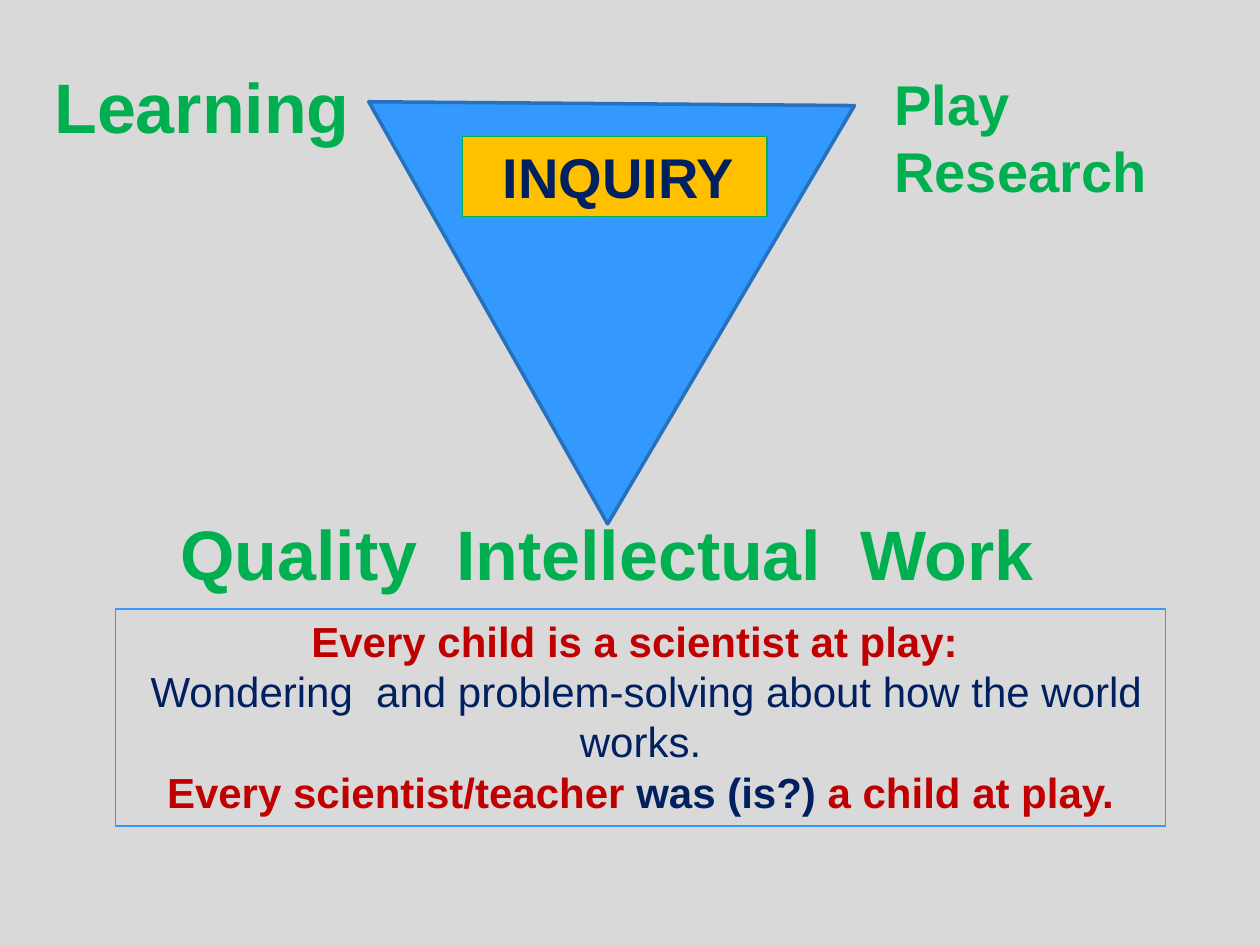
from pptx import Presentation
from pptx.dml.color import RGBColor
from pptx.enum.shapes import MSO_SHAPE as Shape
from pptx.enum.text import MSO_ANCHOR as Anchor, PP_ALIGN as Align
from pptx.util import Pt

GREEN, NAVY, RED = "00B050", "002060", "C00000"
BLUE, EDGE, GOLD, GREY = "3399FF", "2671BD", "FFC000", "D9D9D9"


def rgb(code):
    return RGBColor.from_string(code)


def write(shape, lines, size, align=Align.LEFT, inset=7.2, wrap=True):
    """Fill a shape with lines, each a list of (text, colour, bold) runs."""
    frame = shape.text_frame
    frame.word_wrap = wrap
    frame.vertical_anchor = Anchor.TOP
    frame.margin_left = Pt(inset)
    for i, line in enumerate(lines):
        para = frame.paragraphs[0] if i == 0 else frame.add_paragraph()
        para.alignment = align
        for text, color, bold in line:
            run = para.add_run()
            run.text = text
            font = run.font
            font.name, font.size, font.bold = "Arial", Pt(size), bold
            font.color.rgb = rgb(color)


def draw(slide, kind, box, fill, line, width):
    shape = slide.shapes.add_shape(kind, *map(Pt, box))
    shape.shadow.inherit = False
    if fill:
        shape.fill.solid()
        shape.fill.fore_color.rgb = rgb(fill)
    else:
        shape.fill.background()
    shape.line.color.rgb = rgb(line)
    shape.line.width = Pt(width)
    return shape


def label(slide, box, words, size, wrap=False):
    shape = slide.shapes.add_textbox(*map(Pt, box))
    write(shape, [[(word, GREEN, True)] for word in words], size, wrap=wrap)


def diagram(slide, left, top):
    """Triangle pointing down, with a name at each corner and one inside."""
    label(slide, (left, top + 9, 185, 55.5), ["Learning"], 40, wrap=True)
    label(slide, (left + 72, top + 264, 507.6, 55.5),
          ["Quality  Intellectual  Work"], 40)
    label(slide, (left + 480, top + 12, 160, 85), ["Play", "Research"], 32)
    triangle = draw(slide, Shape.ISOSCELES_TRIANGLE,
                    (left + 221, top - 24.7, 277.2, 240.5), BLUE, EDGE, 2)
    triangle.rotation = 60.5
    plate = draw(slide, Shape.RECTANGLE,
                 (left + 240.2, top + 53.8, 174.2, 46), GOLD, GREEN, 0.75)
    write(plate, [[("INQUIRY", NAVY, True)]], 32, inset=23)


def message(slide, box):
    panel = draw(slide, Shape.RECTANGLE, box, None, BLUE, 0.75)
    lines = [
        [("Every child is a scientist at play: ", RED, True)],
        [(" Wondering  and problem-solving about how the world works.",
          NAVY, False)],
        [("Every scientist/teacher ", RED, True), ("was (is?) ", NAVY, True),
         ("a child at play.", RED, True)],
    ]
    write(panel, lines, 24, Align.CENTER)


def main():
    deck = Presentation()
    deck.slide_width, deck.slide_height = Pt(720), Pt(540)
    slide = deck.slides.add_slide(deck.slide_layouts[6])
    back = slide.background.fill
    back.solid()
    back.fore_color.rgb = rgb(GREY)
    diagram(slide, 24, 24)
    message(slide, (66, 348, 600, 124))
    deck.save("out.pptx")


if __name__ == "__main__":
    main()
